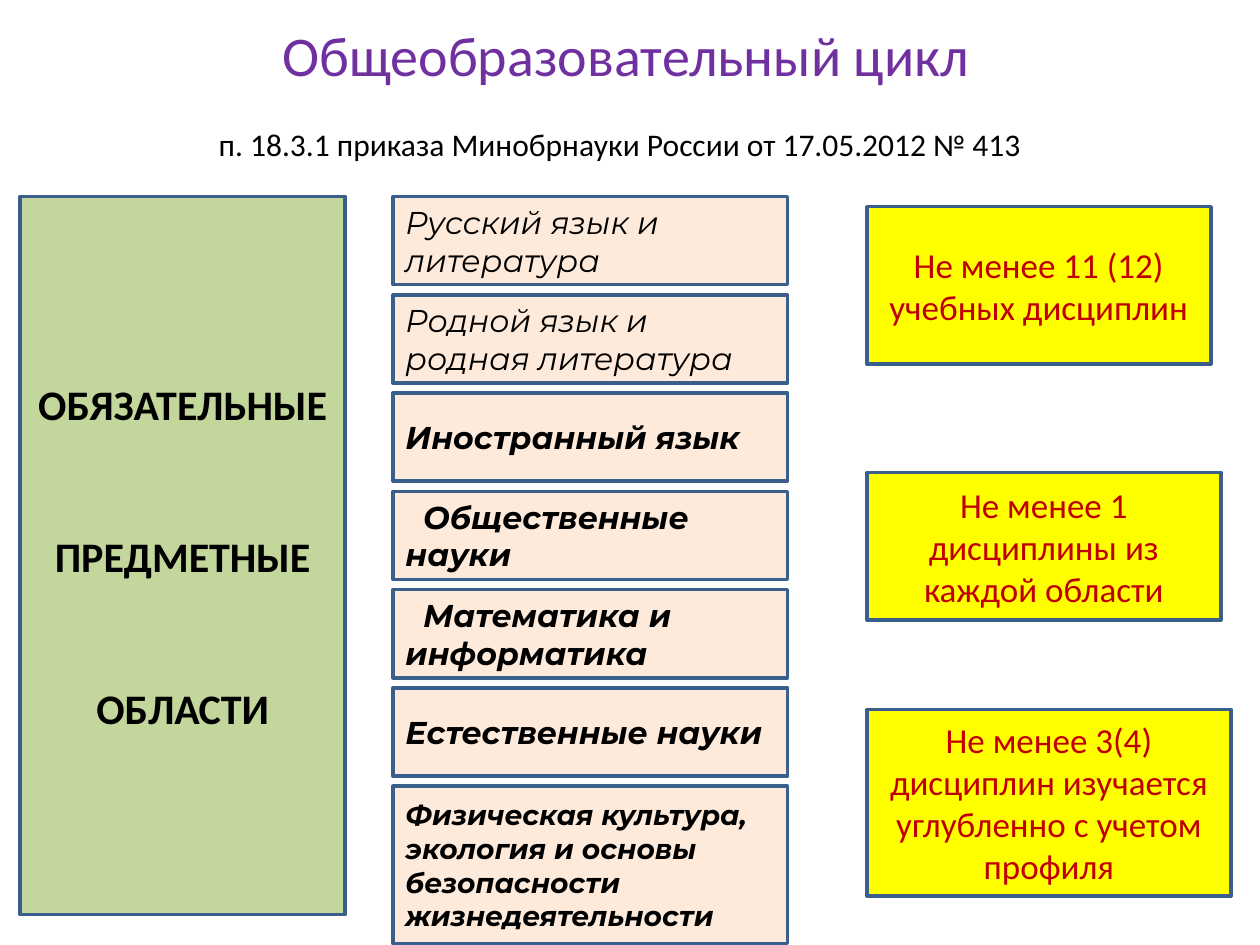
from dataclasses import dataclass

from pptx import Presentation
from pptx.dml.color import RGBColor
from pptx.enum.shapes import MSO_SHAPE
from pptx.enum.text import MSO_ANCHOR, PP_ALIGN
from pptx.util import Inches, Pt

RECTANGLE = MSO_SHAPE.RECTANGLE
MIDDLE = MSO_ANCHOR.MIDDLE
LEFT, CENTER = PP_ALIGN.LEFT, PP_ALIGN.CENTER


@dataclass(frozen=True)
class Theme:
    """Colours, fonts and type sizes of the slide."""

    body_font: str = "Calibri"
    subject_font: str = "Montserrat"
    title: str = "7030A0"
    ink: str = "000000"
    accent: str = "C00000"
    outline: str = "3A5F8C"
    green: str = "C3D69B"
    peach: str = "FDEADA"
    yellow: str = "FFFF00"
    title_size: int = 32
    heading_size: int = 24
    note_size: int = 20
    text_size: int = 18
    small_size: int = 16


class SlideBuilder:
    """Holds the theme and the current slide and adds styled elements."""

    def __init__(self, slide, theme):
        self.slide = slide
        self.theme = theme

    def fill_text(self, frame, lines, size, color, align=CENTER, font=None,
                  bold=False, italic=False, gap=0, indent=0):
        """Fill a text frame with evenly spaced paragraphs."""
        frame.word_wrap = True
        for index, line in enumerate(lines):
            para = frame.add_paragraph() if index else frame.paragraphs[0]
            para.text = line
            para.alignment = align
            para.space_before = Pt(gap if index else 0)
            para.font.name = font or self.theme.body_font
            para.font.size = Pt(size)
            para.font.bold = bold
            para.font.italic = italic
            para.font.color.rgb = RGBColor.from_string(color)
            if indent:
                para._p.get_or_add_pPr().set("indent", str(Inches(indent)))

    def title(self, text, left, top, width, height):
        """Place and fill the title placeholder."""
        title = self.slide.shapes.title
        title.left, title.top = Inches(left), Inches(top)
        title.width, title.height = Inches(width), Inches(height)
        title.text_frame.vertical_anchor = MIDDLE
        self.fill_text(title.text_frame, [text], self.theme.title_size, self.theme.title)

    def caption(self, text, left, top, width, height):
        """Add a centred line of plain text."""
        box = self.slide.shapes.add_textbox(
            Inches(left), Inches(top), Inches(width), Inches(height))
        self.fill_text(box.text_frame, [text], self.theme.text_size, self.theme.ink)

    def box(self, lines, left, top, width, height, fill, size, color, **style):
        """Add an outlined rectangle with text."""
        box = self.slide.shapes.add_shape(
            RECTANGLE, Inches(left), Inches(top), Inches(width), Inches(height))
        box.shadow.inherit = False
        box.fill.solid()
        box.fill.fore_color.rgb = RGBColor.from_string(fill)
        box.line.color.rgb = RGBColor.from_string(self.theme.outline)
        box.line.width = Pt(2)
        box.text_frame.vertical_anchor = MIDDLE
        self.fill_text(box.text_frame, lines, size, color, **style)

    def subject(self, text, row, bold=True, indent=0, height=0.7, size=None):
        """Add one subject area to the middle column."""
        theme = self.theme
        self.box([text], 3.12, 1.56 + row * 0.78, 3.13, height, theme.peach,
                 size or theme.text_size, theme.ink, align=LEFT,
                 font=theme.subject_font, bold=bold, italic=True, indent=indent)

    def requirement(self, text, top, width, height):
        """Add one requirement to the right column."""
        theme = self.theme
        self.box([text], 6.88, top, width, height, theme.yellow,
                 theme.note_size, theme.accent)


def main():
    """Build the slide and save the deck."""
    theme = Theme()
    deck = Presentation()
    deck.slide_width, deck.slide_height = Inches(10), Inches(7.5)
    page = SlideBuilder(deck.slides.add_slide(deck.slide_layouts[5]), theme)

    page.title("Общеобразовательный цикл", 0.47, 0, 9, 0.86)
    page.box(["ОБЯЗАТЕЛЬНЫЕ", "ПРЕДМЕТНЫЕ", "ОБЛАСТИ"], 0.16, 1.56, 2.58, 5.7,
             theme.green, theme.heading_size, theme.ink, bold=True, gap=58)

    subjects = [
        ("Русский язык и литература", {"bold": False}),
        ("Родной язык и родная литература", {"bold": False}),
        ("Иностранный язык", {}),
        ("Общественные науки", {"indent": 0.14}),
        ("Математика и информатика", {"indent": 0.14}),
        ("Естественные науки", {}),
        ("Физическая культура, экология и основы безопасности жизнедеятельности",
         {"height": 1.25, "size": theme.small_size}),
    ]
    for row, (text, style) in enumerate(subjects):
        page.subject(text, row, **style)

    requirements = [
        ("Не менее 11 (12) учебных дисциплин", 1.64, 2.73, 1.25),
        ("Не менее 1 дисциплины из каждой области", 3.75, 2.81, 1.17),
        ("Не менее 3(4) дисциплин изучается углубленно с учетом профиля",
         5.63, 2.89, 1.48),
    ]
    for requirement in requirements:
        page.requirement(*requirement)

    page.caption("п. 18.3.1 приказа Минобрнауки России от 17.05.2012 № 413",
                 0.31, 0.94, 9.22, 0.4)
    deck.save("out.pptx")


if __name__ == "__main__":
    main()
